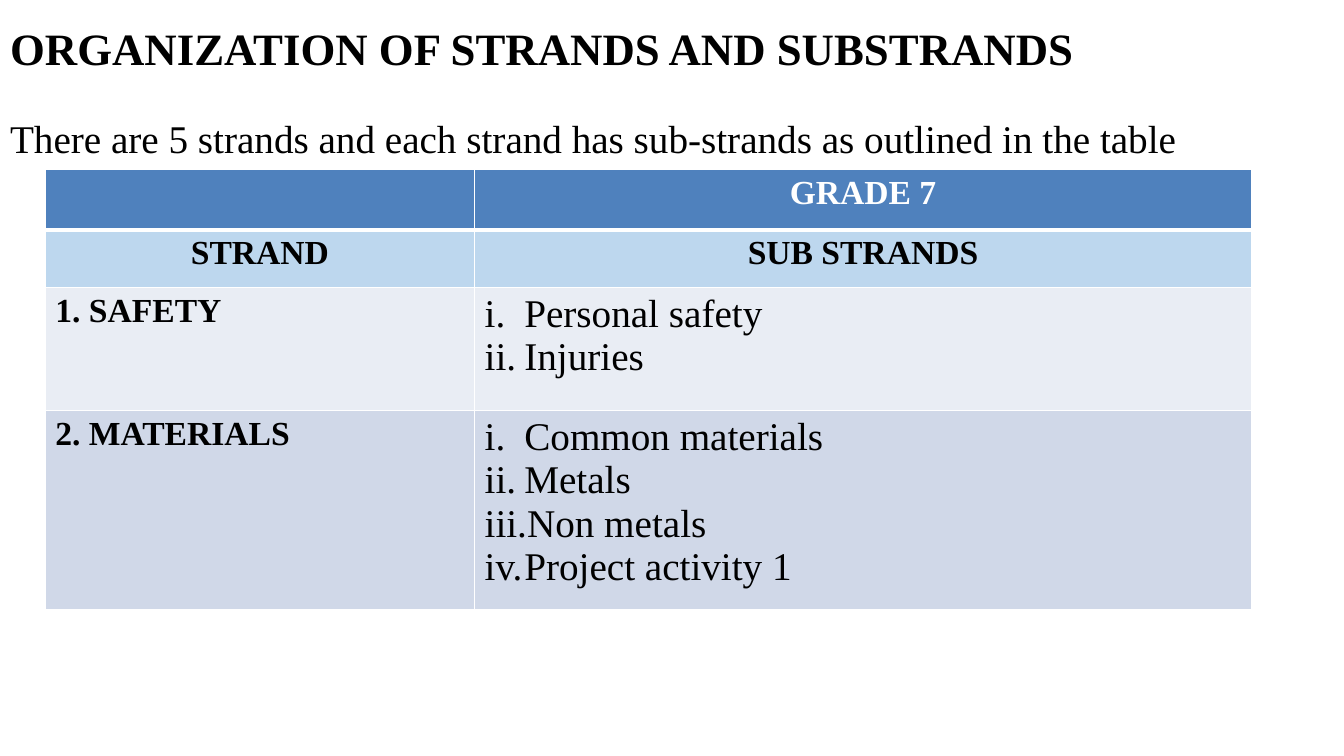
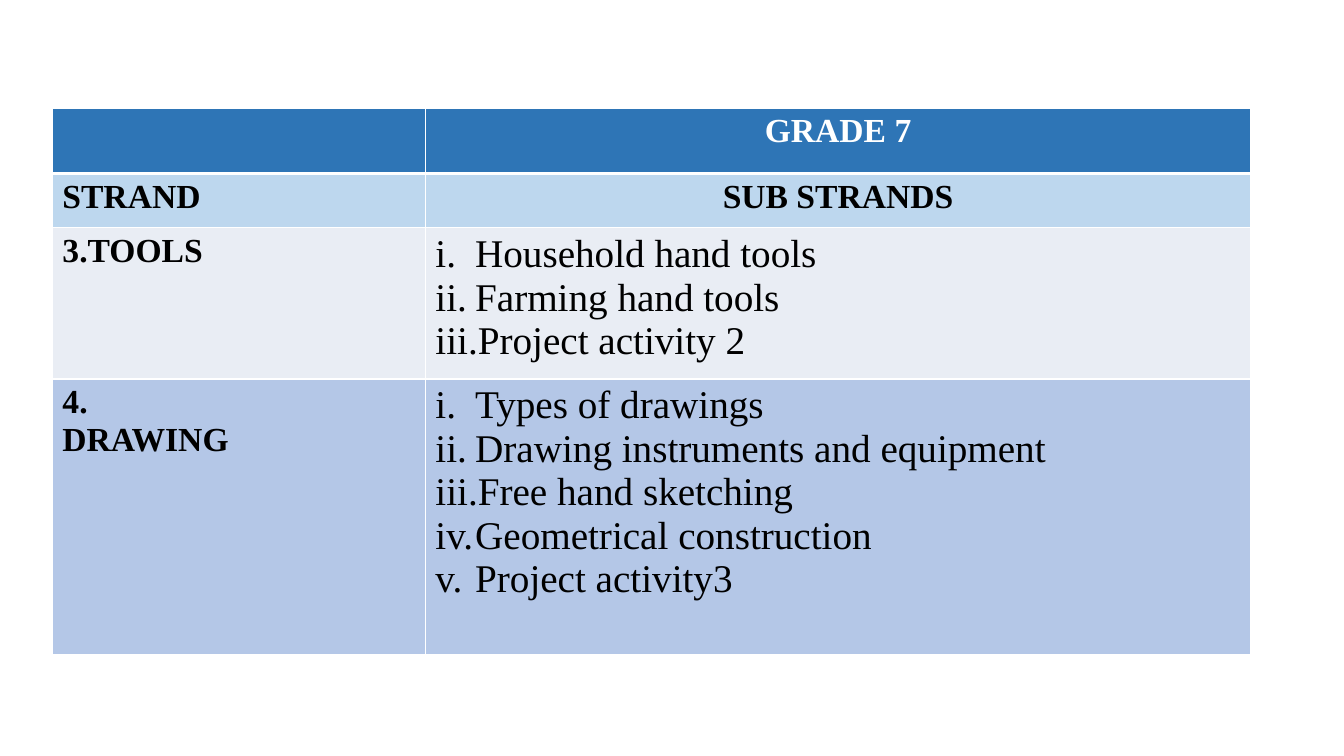
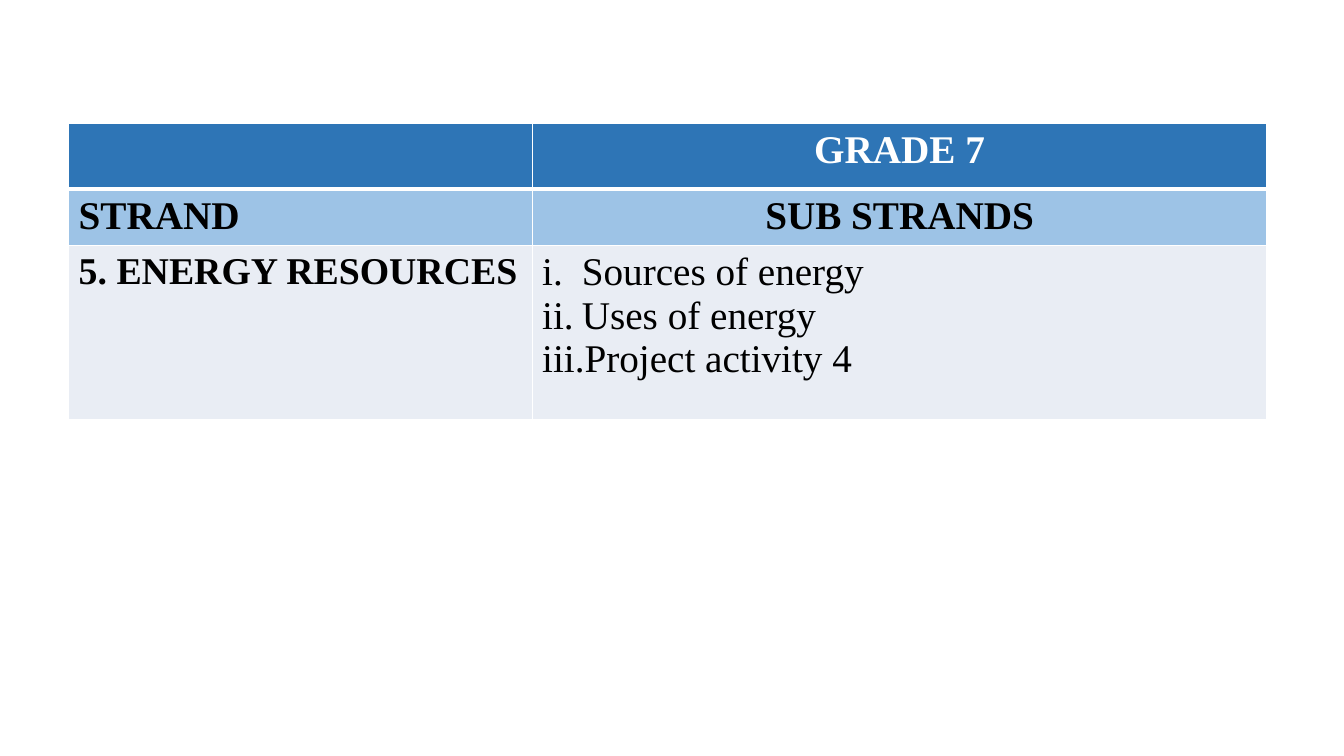
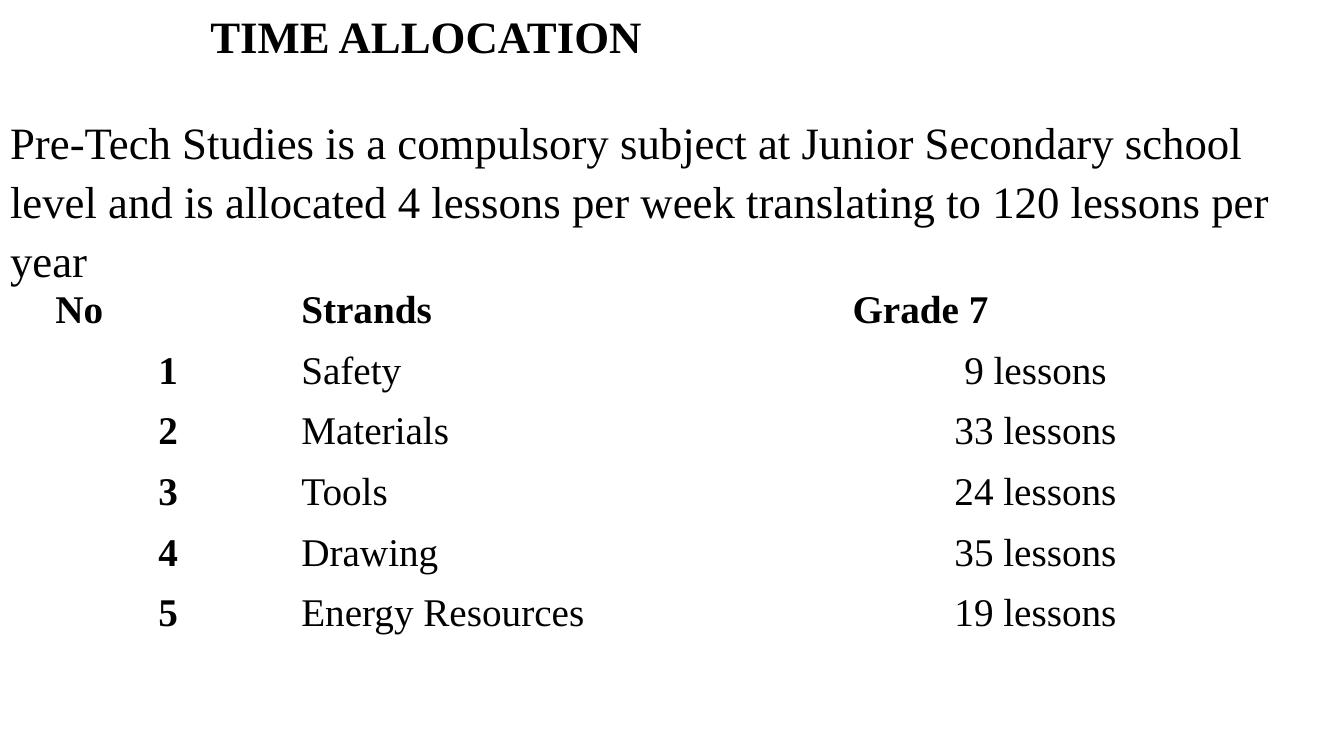
from pptx import Presentation, util as u
from pptx.dml.color import RGBColor
from pptx.enum import text as t
from pptx.oxml import parse_xml
from pptx.oxml.ns import nsdecls
from lxml import etree

BLACK = RGBColor(0x00, 0x00, 0x00)
WHITE = RGBColor(0xFF, 0xFF, 0xFF)
STEEL = RGBColor(0x4F, 0x81, 0xBD)
BLUE = RGBColor(0x2E, 0x75, 0xB6)
SKY = RGBColor(0xBD, 0xD7, 0xEE)
AZURE = RGBColor(0x9D, 0xC3, 0xE6)
PALE = RGBColor(0xE9, 0xED, 0xF4)
MIST = RGBColor(0xD0, 0xD8, 0xE8)
LILAC = RGBColor(0xB4, 0xC7, 0xE7)

FONT = "Times New Roman"
LEFT, MID = t.PP_ALIGN.LEFT, t.PP_ALIGN.CENTER

deck = Presentation()
deck.slide_width, deck.slide_height = u.Cm(33.87), u.Cm(19.05)


def write(frame, lines, size, bold=False, color=BLACK, align=LEFT, bullet=None, indent=0):
    """Fill a text frame with one paragraph per line."""
    for i, line in enumerate(lines):
        para = frame.paragraphs[0] if i == 0 else frame.add_paragraph()
        para.alignment = align
        if bullet is not None:
            props = para._p.get_or_add_pPr()
            props.set("marL", str(u.Cm(indent)))
            props.set("indent", str(-u.Cm(indent)))
            props.append(parse_xml(f"<a:{bullet} {nsdecls('a')}/>"))
        run = para.add_run()
        run.text = line
        look = {"name": FONT, "size": u.Pt(size), "bold": bold}
        for key, value in look.items():
            setattr(run.font, key, value)
        run.font.color.rgb = color


def grid(slide, left, top, cols, rows):
    """Add a plain table; column widths and row heights are in cm."""
    frame = slide.shapes.add_table(len(rows), len(cols), u.Cm(left), u.Cm(top),
                                   u.Cm(sum(cols)), u.Cm(sum(rows)))
    table = frame.table
    table.first_row = table.horz_banding = False
    for col, width in zip(table.columns, cols):
        col.width = u.Cm(width)
    for row, height in zip(table.rows, rows):
        row.height = u.Cm(height)
    return table


# Slides that carry a heading and an opening line
heads = {
    0: dict(title="ORGANIZATION OF STRANDS AND SUBSTRANDS", box=(0, -0.05, 33.15, 2.18),
            align=LEFT, anchor=t.MSO_ANCHOR.BOTTOM, inset=0.25,
            body="There are 5 strands and each strand has sub-strands as outlined in the table",
            size=28, area=(0, 2.64, 33.87, 1.45)),
    3: dict(title="TIME ALLOCATION", box=(0.2, 0.1, 21.08, 2.51),
            align=MID, anchor=t.MSO_ANCHOR.TOP, inset=0.13,
            body="Pre-Tech Studies is a compulsory subject at Junior Secondary school level "
                 "and is allocated 4 lessons per week translating to 120 lessons per year",
            size=32, area=(0, 2.62, 33.87, 4.4)),
}
slides = []
for i in range(4):
    head = heads.get(i)
    slide = deck.slides.add_slide(deck.slide_layouts[1 if head else 6])
    slides.append(slide)
    if not head:
        continue
    title, body = slide.shapes.title, slide.placeholders[1]
    for shape, box in ((title, head["box"]), (body, head["area"])):
        shape.left, shape.top, shape.width, shape.height = [u.Cm(n) for n in box]
        shape.text_frame.auto_size = t.MSO_AUTO_SIZE.NONE
        shape.text_frame.word_wrap = True
    frame = title.text_frame
    frame.vertical_anchor = head["anchor"]
    frame.margin_top = frame.margin_bottom = u.Cm(head["inset"])
    write(frame, [head["title"]], 32, True, align=head["align"])
    write(body.text_frame, [head["body"]], head["size"], bullet="buNone")
    para = body.text_frame.paragraphs[0]
    para.space_before, para.line_spacing = u.Pt(0), 1.1

# Strand tables: each strand is (name lines, name size, sub-strands, fill)
plans = [
    dict(at=(1.14, 4.27), cols=(10.82, 19.58), rows=(1.52, 1.45, 3.1, 5.03),
         size=24, align=MID, fills=(STEEL, SKY), strands=[
             (["1. SAFETY"], 24, ["Personal safety", "Injuries"], PALE),
             (["2. MATERIALS"], 24,
              ["Common materials", "Metals", "Non metals", "Project activity 1"], MIST)]),
    dict(at=(1.32, 2.72), cols=(9.4, 20.8), rows=(1.65, 1.37, 3.81, 6.95),
         size=24, align=LEFT, fills=(BLUE, SKY), strands=[
             (["3.TOOLS"], 24,
              ["Household hand tools", "Farming hand tools", "Project activity 2"], PALE),
             (["4.", "DRAWING"], 24,
              ["Types of drawings", "Drawing instruments and equipment",
               "Free hand sketching", "Geometrical construction", "Project activity3"], LILAC)]),
    dict(at=(1.73, 3.12), cols=(11.68, 18.52), rows=(1.65, 1.42, 4.39),
         size=28, align=LEFT, fills=(BLUE, AZURE), strands=[
             (["5. ENERGY RESOURCES"], 27,
              ["Sources of energy", "Uses of energy", "Project activity 4"], PALE)]),
]
for slide, plan in zip(slides, plans):
    table = grid(slide, *plan["at"], plan["cols"], plan["rows"])
    size = plan["size"]
    fills = [*plan["fills"], *(strand[3] for strand in plan["strands"])]

    # White rules, heavier under the header, then the row colours
    for r, fill in enumerate(fills):
        for cell in table.rows[r].cells:
            props = cell._tc.get_or_add_tcPr()
            for side, heavy in (("L", False), ("R", False), ("T", r == 1), ("B", r == 0)):
                line = etree.SubElement(props, f"{{{props.nsmap['a']}}}ln{side}",
                                        w=str(u.Pt(3 if heavy else 1)))
                line.append(parse_xml(
                    f'<a:solidFill {nsdecls("a")}><a:srgbClr val="{WHITE}"/></a:solidFill>'))
            cell.fill.solid()
            cell.fill.fore_color.rgb = fill

    # Header rows and strands
    write(table.cell(0, 1).text_frame, ["GRADE 7"], size, True, WHITE, MID)
    write(table.cell(1, 0).text_frame, ["STRAND"], size, True, align=plan["align"])
    write(table.cell(1, 1).text_frame, ["SUB STRANDS"], size, True, align=MID)
    for r, (name, points, subs, _) in enumerate(plan["strands"], 2):
        write(table.cell(r, 0).text_frame, name, points, True)
        write(table.cell(r, 1).text_frame, subs, 28,
              bullet='buAutoNum type="romanLcPeriod"', indent=1)

# Lesson table
lessons = [("No", "Strands", "Grade 7"),
           ("1", "Safety", "9 lessons"),
           ("2", "Materials", "33 lessons"),
           ("3", "Tools", "24 lessons"),
           ("4", "Drawing", "35 lessons"),
           ("5", "Energy Resources", "19 lessons")]
table = grid(slides[3], 1.14, 7.14, (6.2, 13.89, 9.73), [1.53] * len(lessons))
for r, row in enumerate(lessons):
    for c, word in enumerate(row):
        cell = table.cell(r, c)
        cell.fill.background()
        write(cell.text_frame, [word], 28, r == 0 or c == 0,
              align=MID if r and c != 1 else LEFT)

deck.save("out.pptx")
